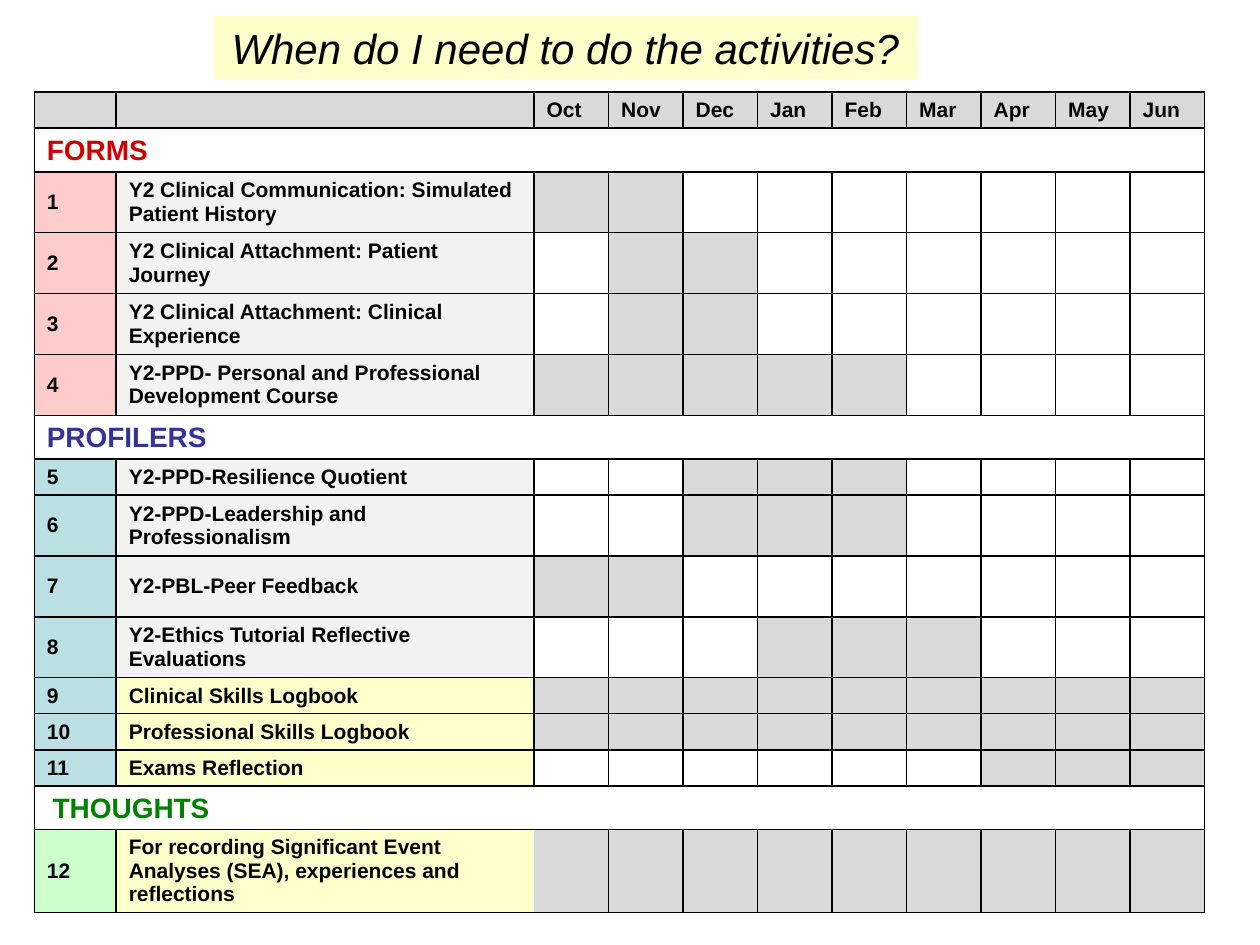
from dataclasses import dataclass

from lxml import etree
from pptx import Presentation
from pptx.dml.color import RGBColor
from pptx.enum import text as t
from pptx.oxml import ns
from pptx.util import Pt


@dataclass(frozen=True)
class Theme:
    font: str = "Arial"
    black: str = "000000"
    white: str = "FFFFFF"
    busy: str = "D9D9D9"
    plain: str = "F2F2F2"
    cream: str = "FFFFCC"
    pink: str = "FFCCCC"
    teal: str = "BBE0E3"
    mint: str = "CCFFCC"
    red: str = "CC0000"
    blue: str = "333399"
    green: str = "008000"
    title: int = 24
    head: int = 16
    body: int = 12


THEME = Theme()
MONTHS = "Oct Nov Dec Jan Feb Mar Apr May Jun".split()
LINES = {1: 20.6, 2: 34.8, 3: 47.4}  # row height by lines of text
HEAD = 25
PAD = 3  # space above and below the words of a cell
NUM, NAME, MONTH = 46.8, 238.8, 42.6  # column widths

# Activity: name, first and last busy month, lines of text, name fill
GROUPS = [
    ("FORMS", THEME.red, THEME.pink, [
        ("Y2 Clinical Communication: Simulated Patient History", "Oct", "Nov", 2, THEME.plain),
        ("Y2 Clinical Attachment: Patient Journey", "Nov", "Dec", 2, THEME.plain),
        ("Y2 Clinical Attachment: Clinical Experience", "Nov", "Dec", 2, THEME.plain),
        ("Y2-PPD- Personal and Professional Development Course", "Oct", "Feb", 2, THEME.plain),
    ]),
    ("PROFILERS", THEME.blue, THEME.teal, [
        ("Y2-PPD-Resilience Quotient", "Dec", "Feb", 1, THEME.plain),
        ("Y2-PPD-Leadership and Professionalism", "Dec", "Feb", 2, THEME.plain),
        ("Y2-PBL-Peer Feedback", "Oct", "Nov", 2, THEME.plain),
        ("Y2-Ethics Tutorial Reflective Evaluations", "Jan", "Mar", 2, THEME.plain),
        ("Clinical Skills Logbook", "Oct", "Jun", 1, THEME.cream),
        ("Professional Skills Logbook", "Oct", "Jun", 1, THEME.cream),
        ("Exams Reflection", "Apr", "Jun", 1, THEME.cream),
    ]),
    (" THOUGHTS", THEME.green, THEME.mint, [
        ("For recording Significant Event Analyses (SEA), experiences and reflections",
         "Oct", "Jun", 3, THEME.cream),
    ]),
]


def write(frame, words, size=THEME.body, color=THEME.black, bold=False,
          italic=False, align=None):
    """Fill a text frame; an empty one still keeps its type size.

    A leading space is set in the body size.
    """
    para = frame.paragraphs[0]
    para.alignment = align
    if not words:
        etree.SubElement(para._p, ns.qn("a:endParaRPr"), sz=str(size * 100))
        return
    bare = words.lstrip()
    lead = words[:len(words) - len(bare)]
    for part, points in ((lead, THEME.body), (bare, size)):
        if part:
            run = para.add_run()
            run.text = part
            font = run.font
            font.name, font.size, font.bold, font.italic = THEME.font, Pt(points), bold, italic
            font.color.rgb = RGBColor.from_string(color)


def edge(cell, sides):
    """Draw the named sides (of LRTB) and clear the others."""
    props = cell._tc.get_or_add_tcPr()
    for side in "LRTB":
        line = etree.SubElement(props, ns.qn("a:ln" + side), w=str(Pt(1)))
        if side in sides:
            fill = etree.SubElement(line, ns.qn("a:solidFill"))
            etree.SubElement(fill, ns.qn("a:srgbClr"), val=THEME.black)
        else:
            etree.SubElement(line, ns.qn("a:noFill"))


class Deck:
    """Holds the theme and the slide being built."""

    def __init__(self, theme):
        self.theme = theme
        self.file = Presentation()
        self.file.slide_width, self.file.slide_height = Pt(720), Pt(540)
        self.slide = self.file.slides.add_slide(self.file.slide_layouts[5])

    def title(self, words, left, top, width, height):
        box = self.slide.shapes.title
        box.left, box.top, box.width, box.height = map(Pt, (left, top, width, height))
        box.fill.solid()
        box.fill.fore_color.rgb = RGBColor.from_string(self.theme.cream)
        frame = box.text_frame
        frame.word_wrap = True
        frame.auto_size = t.MSO_AUTO_SIZE.NONE
        frame.vertical_anchor = t.MSO_ANCHOR.MIDDLE
        write(frame, words, size=self.theme.title, italic=True, align=t.PP_ALIGN.CENTER)

    def cell(self, row, col, words="", fill=THEME.white, sides="LRTB",
             anchor=t.MSO_ANCHOR.MIDDLE, **form):
        cell = self.table.cell(row, col)
        cell.vertical_anchor = anchor
        cell.margin_top = cell.margin_bottom = Pt(PAD)
        write(cell.text_frame, words, bold=True, **form)
        edge(cell, sides)
        cell.fill.solid()
        cell.fill.fore_color.rgb = RGBColor.from_string(fill)

    def grid(self, left, top, widths, heights):
        shape = self.slide.shapes.add_table(
            len(heights), len(widths), Pt(left), Pt(top), Pt(sum(widths)), Pt(sum(heights)))
        self.table = shape.table
        self.table.first_row = self.table.horz_banding = False
        for col, width in zip(self.table.columns, widths):
            col.width = Pt(width)
        for row, height in zip(self.table.rows, heights):
            row.height = Pt(height)

    def section(self, row, words, color):
        last = len(MONTHS) + 1
        self.table.cell(row, 0).merge(self.table.cell(row, 1))
        self.cell(row, 0, words, sides="LTB", anchor=t.MSO_ANCHOR.BOTTOM,
                  size=self.theme.head, color=color)
        for col in range(1, last + 1):
            self.cell(row, col, sides="RTB" if col == last else "TB")

    def task(self, row, num, fill, task):
        name, start, end, lines, tint = task
        final = lines == 3
        self.cell(row, 0, str(num), fill)
        self.cell(row, 1, name, tint, sides="LTB" if final else "LRTB")
        busy = range(MONTHS.index(start), MONTHS.index(end) + 1)
        for i in range(len(MONTHS)):
            self.cell(row, i + 2, fill=self.theme.busy if i in busy else self.theme.white,
                      sides="RTB" if final and i == 0 else "LRTB")

    def plan(self, left, top):
        heights = [LINES[1]]
        for *_, tasks in GROUPS:
            heights += [HEAD] + [LINES[task[3]] for task in tasks]
        self.grid(left, top, [NUM, NAME] + [MONTH] * len(MONTHS), heights)
        for col, words in enumerate(["", ""] + MONTHS):
            self.cell(0, col, words, self.theme.busy)
        row, num = 1, 1
        for words, color, fill, tasks in GROUPS:
            self.section(row, words, color)
            row += 1
            for task in tasks:
                self.task(row, num, fill, task)
                row, num = row + 1, num + 1


def main():
    deck = Deck(THEME)
    deck.plan(19.6, 52.6)
    deck.title("When do I need to do the activities?", 121.9, 9.2, 402.4, 36)
    deck.file.save("out.pptx")


if __name__ == "__main__":
    main()
